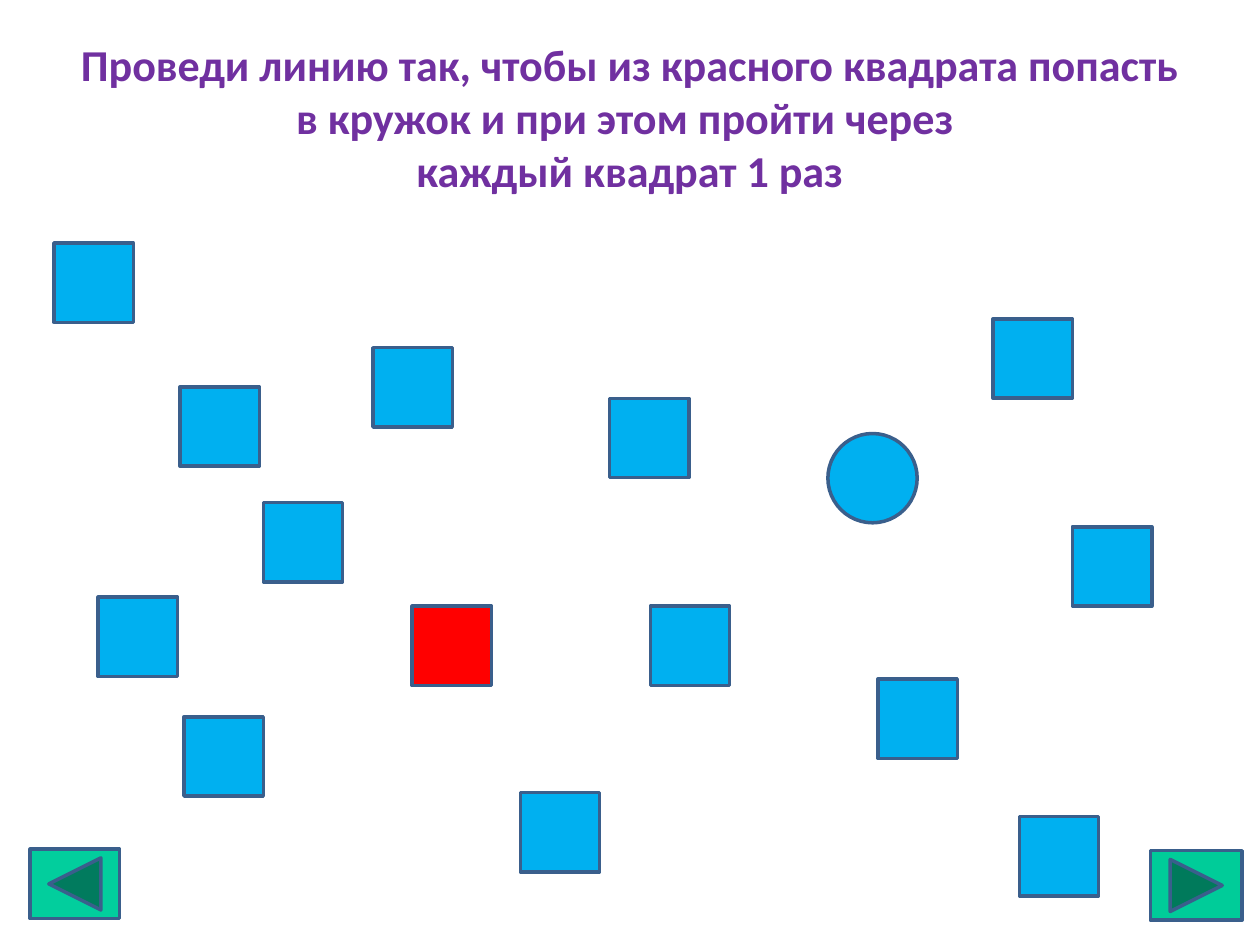
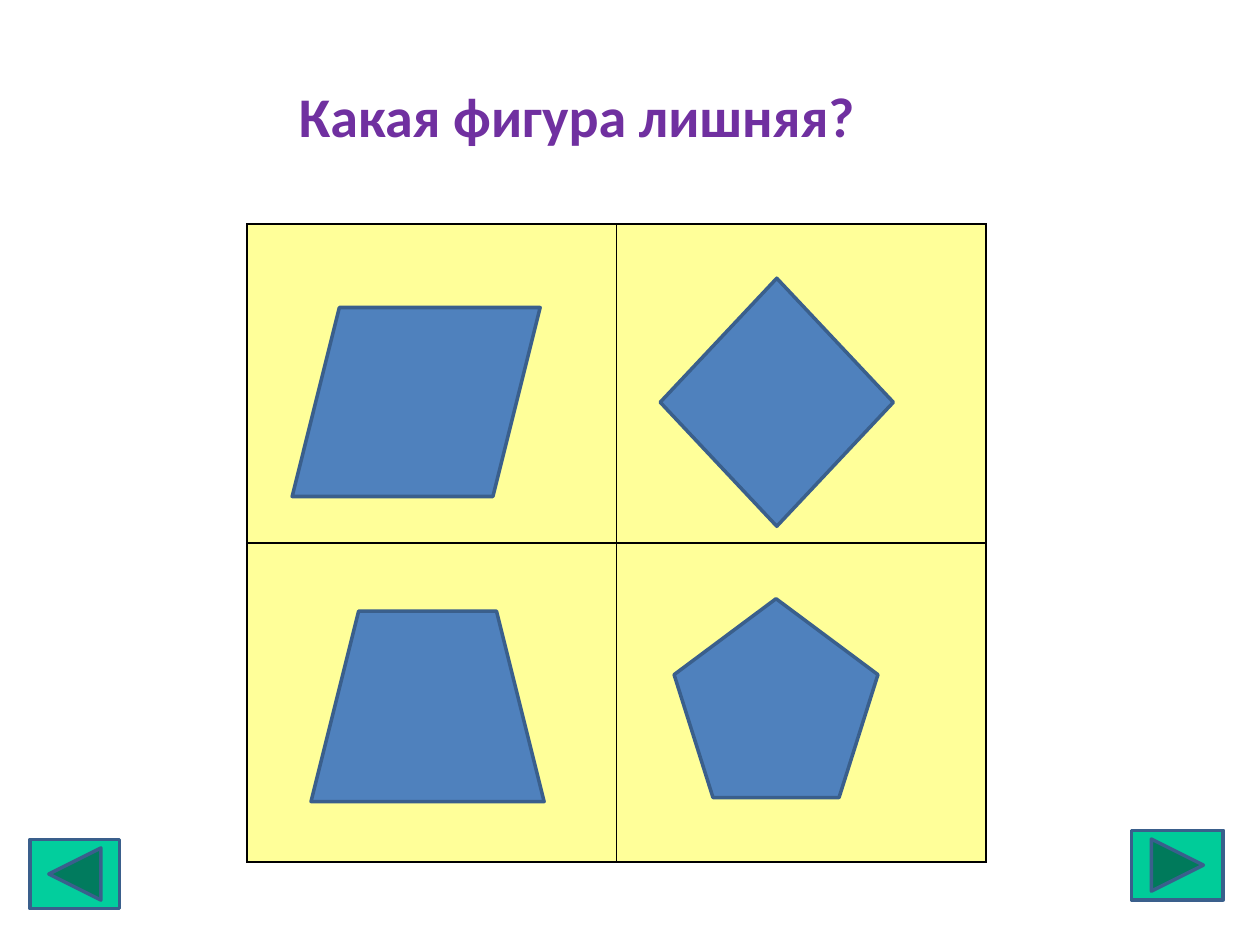
import pptx
import pptx.dml.color
import pptx.enum.shapes
import pptx.enum.text
import pptx.oxml.ns
import pptx.util
import lxml.etree

Cm = pptx.util.Cm
Pt = pptx.util.Pt
SHAPE = pptx.enum.shapes.MSO_SHAPE

COLORS = {
    "title": "7030A0",
    "outline": "3A5F8C",
    "start": "FF0000",
    "target": "00B0F0",
    "figure": "4F81BD",
    "cell": "FFFF99",
    "border": "000000",
    "next": "00CC99",
    "back": "02CE9D",
}
FONT = "Calibri"

MAZE_TITLE = (
    "Проведи линию так, чтобы из красного квадрата попасть в кружок "
    "и при этом пройти через \vкаждый квадрат 1 раз"
)
ODD_TITLE = "Какая фигура лишняя?"

SQUARE = 1.6
CIRCLE = 1.8
START_SQUARE = (8.31, 12.22)
GOAL_CIRCLE = (16.69, 8.74)
BLUE_SQUARES = [
    (13.11, 12.22), (1.98, 12.04), (1.09, 4.9), (3.63, 7.8), (20.02, 6.43),
    (21.62, 10.62), (3.71, 14.45), (5.31, 10.13), (7.52, 7.01), (12.29, 8.03),
    (20.55, 16.46), (10.49, 15.98), (17.7, 13.69),
]

GRID_PLACE = (4.98, 4.52)
GRID_CELL = (7.45, 6.43)
GRID_COUNT = 2
FIGURES = [
    (SHAPE.PARALLELOGRAM, (5.89, 6.2, 5, 3.81)),
    (SHAPE.TRAPEZOID, (6.27, 12.32, 4.7, 3.84)),
    (SHAPE.DIAMOND, (13.31, 5.61, 4.7, 5)),
    (SHAPE.REGULAR_PENTAGON, (13.59, 12.07, 4.11, 4.01)),
]

BUTTON_HEIGHT = 1.4
NEXT_WIDTH = 1.85
BACK_WIDTH = 1.8
BACK_LEFT = 0.61


def rgb(name):
    return pptx.dml.color.RGBColor.from_string(COLORS[name])


def add_title(page, text, place, size):
    box = page.shapes.add_textbox(*map(Cm, place))
    frame = box.text_frame
    frame.word_wrap = True
    frame.vertical_anchor = pptx.enum.text.MSO_ANCHOR.MIDDLE
    write(frame, text, size=size, color="title", bold=True)


def write(frame, text, *, size, color, bold=False,
          align=pptx.enum.text.PP_ALIGN.CENTER):
    para = frame.paragraphs[0]
    para.text = text
    para.alignment = align
    for span in para.runs:
        span.font.name = FONT
        span.font.size = Pt(size)
        span.font.bold = bold
        span.font.color.rgb = rgb(color)


def add_figure(page, kind, place, fill):
    figure = page.shapes.add_shape(kind, *map(Cm, place))
    figure.shadow.inherit = False
    figure.fill.solid()
    figure.fill.fore_color.rgb = rgb(fill)
    figure.line.color.rgb = rgb("outline")
    figure.line.width = Pt(2)


def add_navigation(page, next_place, back_top):
    add_figure(page, SHAPE.ACTION_BUTTON_FORWARD_OR_NEXT,
               (*next_place, NEXT_WIDTH, BUTTON_HEIGHT), "next")
    add_figure(page, SHAPE.ACTION_BUTTON_BACK_OR_PREVIOUS,
               (BACK_LEFT, back_top, BACK_WIDTH, BUTTON_HEIGHT), "back")


def style_cell(cell):
    cell.fill.solid()
    cell.fill.fore_color.rgb = rgb("cell")
    properties = cell._tc.get_or_add_tcPr()
    qn = pptx.oxml.ns.qn
    for index, side in enumerate(("lnL", "lnR", "lnT", "lnB")):
        border = lxml.etree.Element(qn(f"a:{side}"), w=str(Pt(1)))
        fill = lxml.etree.SubElement(border, qn("a:solidFill"))
        lxml.etree.SubElement(fill, qn("a:srgbClr"), val=COLORS["border"])
        properties.insert(index, border)


def add_grid(page):
    width, height = GRID_CELL
    table = page.shapes.add_table(
        GRID_COUNT, GRID_COUNT, *map(Cm, GRID_PLACE),
        Cm(width * GRID_COUNT), Cm(height * GRID_COUNT)).table
    table.first_row = False
    table.horz_banding = False
    for cell in table.iter_cells():
        style_cell(cell)


def build_maze(page):
    add_title(page, MAZE_TITLE, (1.27, 0.76, 22.86, 3.18), 25.2)
    add_figure(page, SHAPE.RECTANGLE, (*START_SQUARE, SQUARE, SQUARE), "start")
    add_figure(page, SHAPE.OVAL, (*GOAL_CIRCLE, CIRCLE, CIRCLE), "target")
    for corner in BLUE_SQUARES:
        add_figure(page, SHAPE.RECTANGLE, (*corner, SQUARE, SQUARE), "target")
    add_navigation(page, (23.19, 17.15), 17.12)


def build_odd_one_out(page):
    add_grid(page)
    add_title(page, ODD_TITLE, (4.7, 0.74, 13.87, 3.18), 32)
    for kind, place in FIGURES:
        add_figure(page, kind, place, "figure")
    add_navigation(page, (22.81, 16.74), 16.92)


def main():
    deck = pptx.Presentation()
    deck.slide_width = Cm(25.4)
    deck.slide_height = Cm(19.05)
    blank = deck.slide_layouts[6]
    for build in (build_maze, build_odd_one_out):
        build(deck.slides.add_slide(blank))
    deck.save("out.pptx")


if __name__ == "__main__":
    main()
